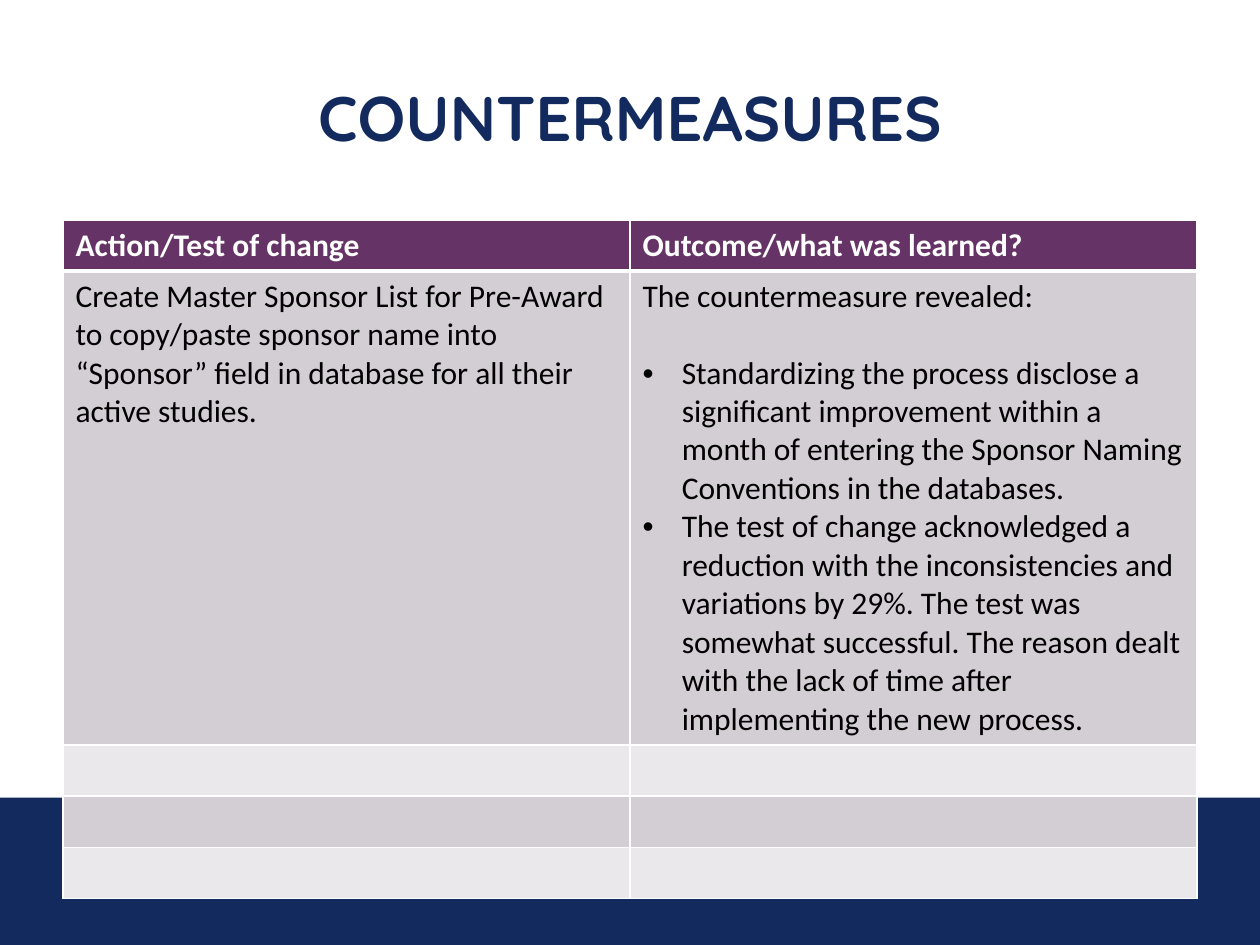
from lxml import etree
from pptx import Presentation
from pptx.dml.color import RGBColor
from pptx.enum.shapes import MSO_SHAPE
from pptx.enum.text import MSO_ANCHOR, PP_ALIGN
from pptx.oxml.ns import qn
from pptx.util import Cm, Pt

RECTANGLE = MSO_SHAPE.RECTANGLE
MIDDLE = MSO_ANCHOR.MIDDLE
CENTER = PP_ALIGN.CENTER
LEFT = PP_ALIGN.LEFT

COLORS = {
    "navy": "122A5D",
    "purple": "663366",
    "dark_band": "D3CED3",
    "light_band": "EAE8EA",
    "white": "FFFFFF",
    "black": "000000",
}
TITLE = "COUNTERMEASURES"
HEADERS = ["Action/Test of change", "Outcome/what was learned?"]
ACTION = (
    "Create Master Sponsor List for Pre-Award to copy/paste sponsor name into "
    "“Sponsor” field in database for all their active studies."
)
OUTCOME = "The countermeasure revealed:"
FINDINGS = [
    "Standardizing the process disclose a significant improvement within a month "
    "of entering the Sponsor Naming Conventions in the databases.",
    "The test of change acknowledged a reduction with the inconsistencies and "
    "variations by 29%. The test was somewhat successful. The reason dealt with "
    "the lack of time after implementing the new process.",
]
ROW_FILLS = ["purple", "dark_band", "light_band", "dark_band", "light_band"]
ROW_HEIGHTS = [1.03, 9.56, 1.03, 1.03, 1.03]
COLUMN_WIDTH = 11.43
BULLET_INDENT = Cm(0.79)
LINE_SPACE = 22


def rgb(name):
    return RGBColor.from_string(COLORS[name])


def write(paragraph, text, size=18, font="Calibri", color="black", bold=False,
          align=LEFT, bullet=False, before=0):
    if bullet:
        properties = paragraph._p.get_or_add_pPr()
        properties.set("marL", str(BULLET_INDENT))
        properties.set("indent", str(-BULLET_INDENT))
        etree.SubElement(properties, qn("a:buFont")).set("typeface", "Arial")
        etree.SubElement(properties, qn("a:buChar")).set("char", "•")
    paragraph.alignment = align
    if before:
        paragraph.space_before = Pt(before)
    run = paragraph.add_run()
    run.text = text
    run.font.size = Pt(size)
    run.font.name = font
    run.font.bold = bold
    run.font.color.rgb = rgb(color)


def add_borders(cell, row):
    properties = cell._tc.get_or_add_tcPr()
    widths = {"L": 1, "R": 1, "T": 3 if row == 1 else 1, "B": 3 if row == 0 else 1}
    for side, width in widths.items():
        line = etree.SubElement(properties, qn(f"a:ln{side}"), w=str(Pt(width)))
        fill = etree.SubElement(line, qn("a:solidFill"))
        etree.SubElement(fill, qn("a:srgbClr")).set("val", COLORS["white"])


presentation = Presentation()
presentation.slide_width = Cm(25.4)
presentation.slide_height = Cm(19.05)
slide = presentation.slides.add_slide(presentation.slide_layouts[5])
slide.background.fill.solid()
slide.background.fill.fore_color.rgb = rgb("white")

footer = slide.shapes.add_shape(RECTANGLE, 0, Cm(16.08), Cm(25.4), Cm(2.97))
footer.shadow.inherit = False
footer.fill.solid()
footer.fill.fore_color.rgb = rgb("navy")
footer.line.fill.background()

title = slide.shapes.title
title.left, title.top, title.width, title.height = Cm(1.27), Cm(0.76), Cm(22.86), Cm(3.18)
title.text_frame.vertical_anchor = MIDDLE
write(title.text_frame.paragraphs[0], TITLE, size=36, font="Quicksand",
      color="navy", bold=True, align=CENTER)

table = slide.shapes.add_table(
    len(ROW_FILLS), len(HEADERS), Cm(1.27), Cm(4.43),
    Cm(COLUMN_WIDTH * len(HEADERS)), Cm(sum(ROW_HEIGHTS)),
).table
for column in table.columns:
    column.width = Cm(COLUMN_WIDTH)
for row, (fill_name, height) in enumerate(zip(ROW_FILLS, ROW_HEIGHTS)):
    table.rows[row].height = Cm(height)
    for cell in table.rows[row].cells:
        add_borders(cell, row)
        cell.fill.solid()
        cell.fill.fore_color.rgb = rgb(fill_name)

for column, header in enumerate(HEADERS):
    write(table.cell(0, column).text_frame.paragraphs[0], header, color="white", bold=True)
write(table.cell(1, 0).text_frame.paragraphs[0], ACTION)
outcome_frame = table.cell(1, 1).text_frame
write(outcome_frame.paragraphs[0], OUTCOME)
for index, finding in enumerate(FINDINGS):
    write(outcome_frame.add_paragraph(), finding, bullet=True,
          before=LINE_SPACE if index == 0 else 0)

presentation.save("out.pptx")
